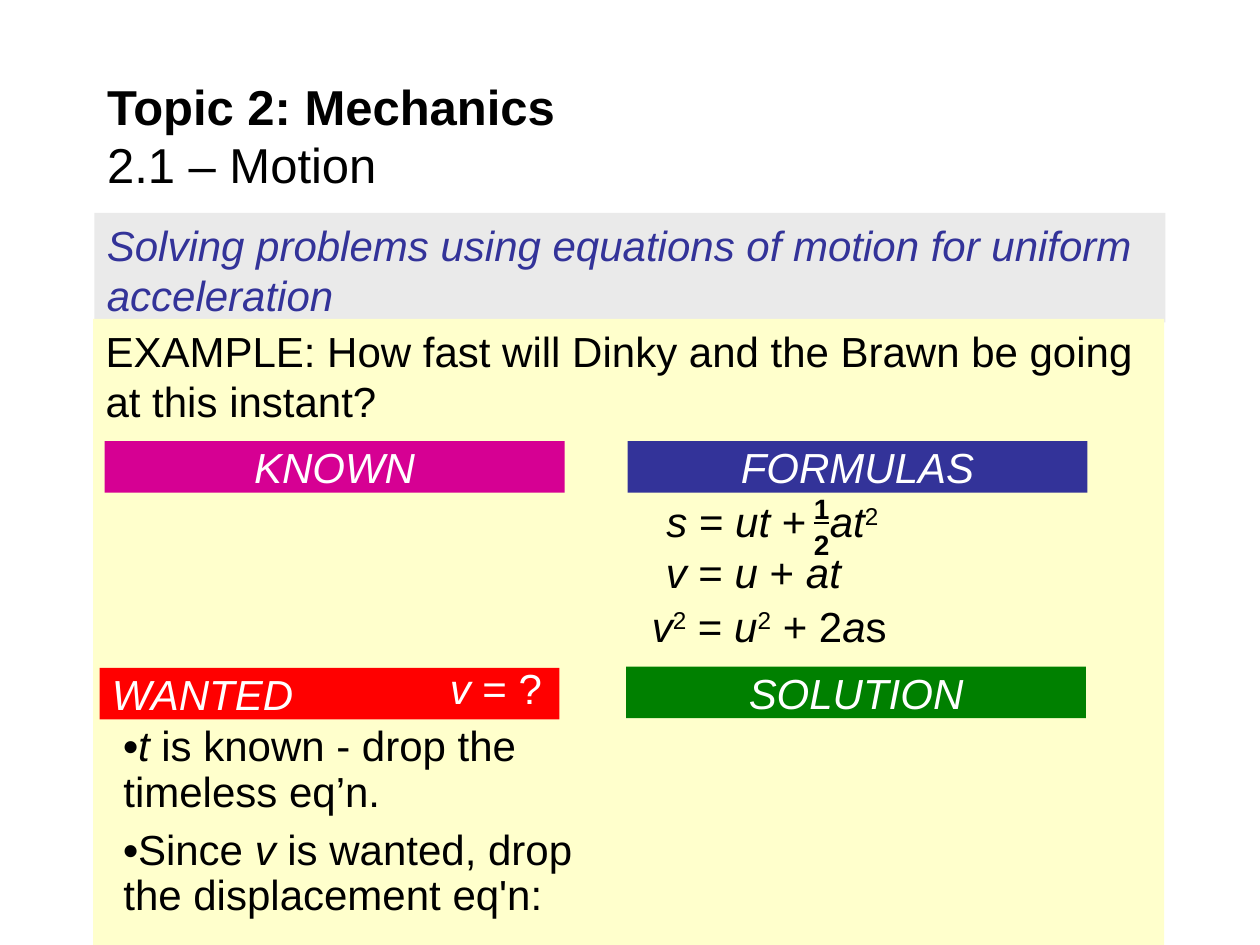
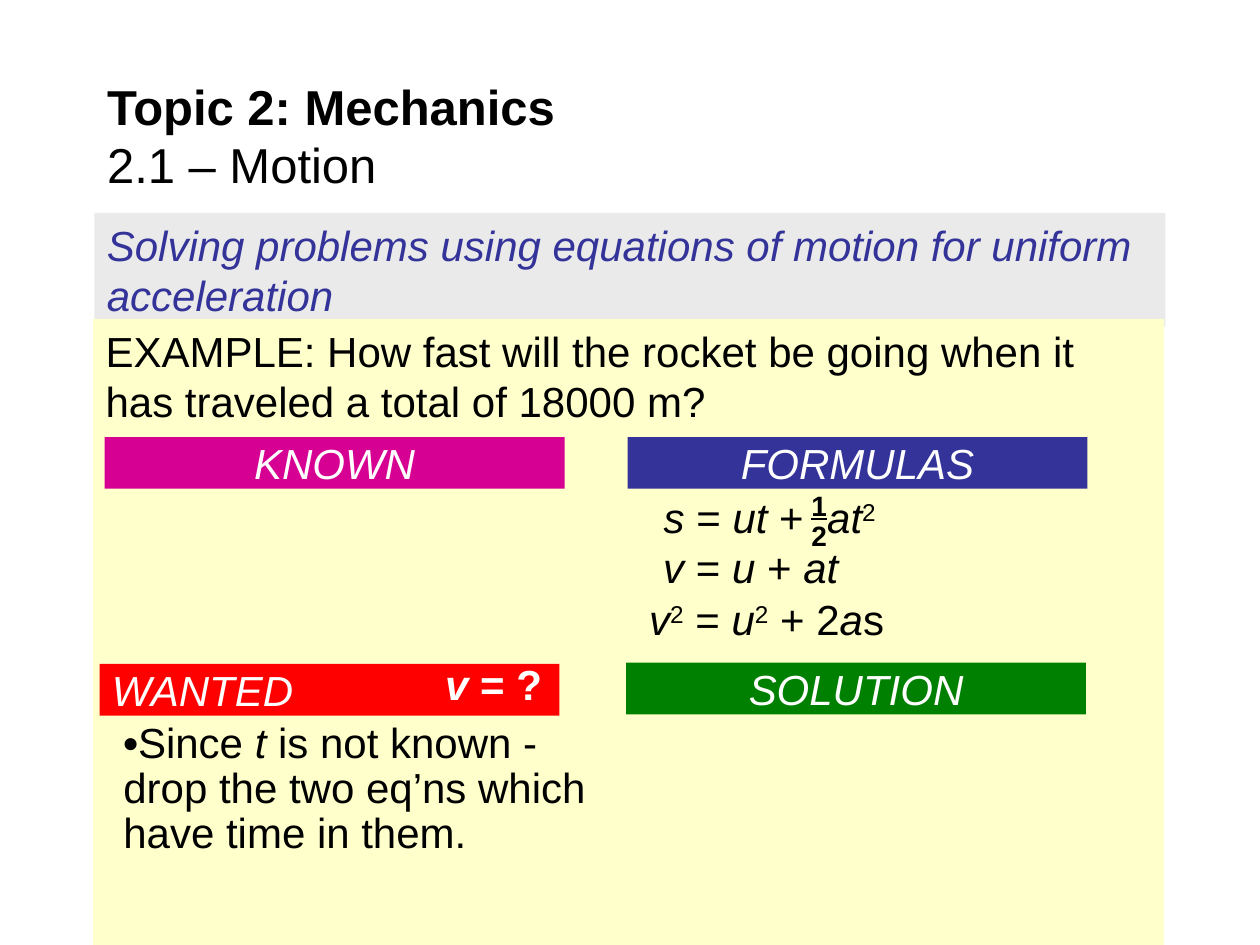
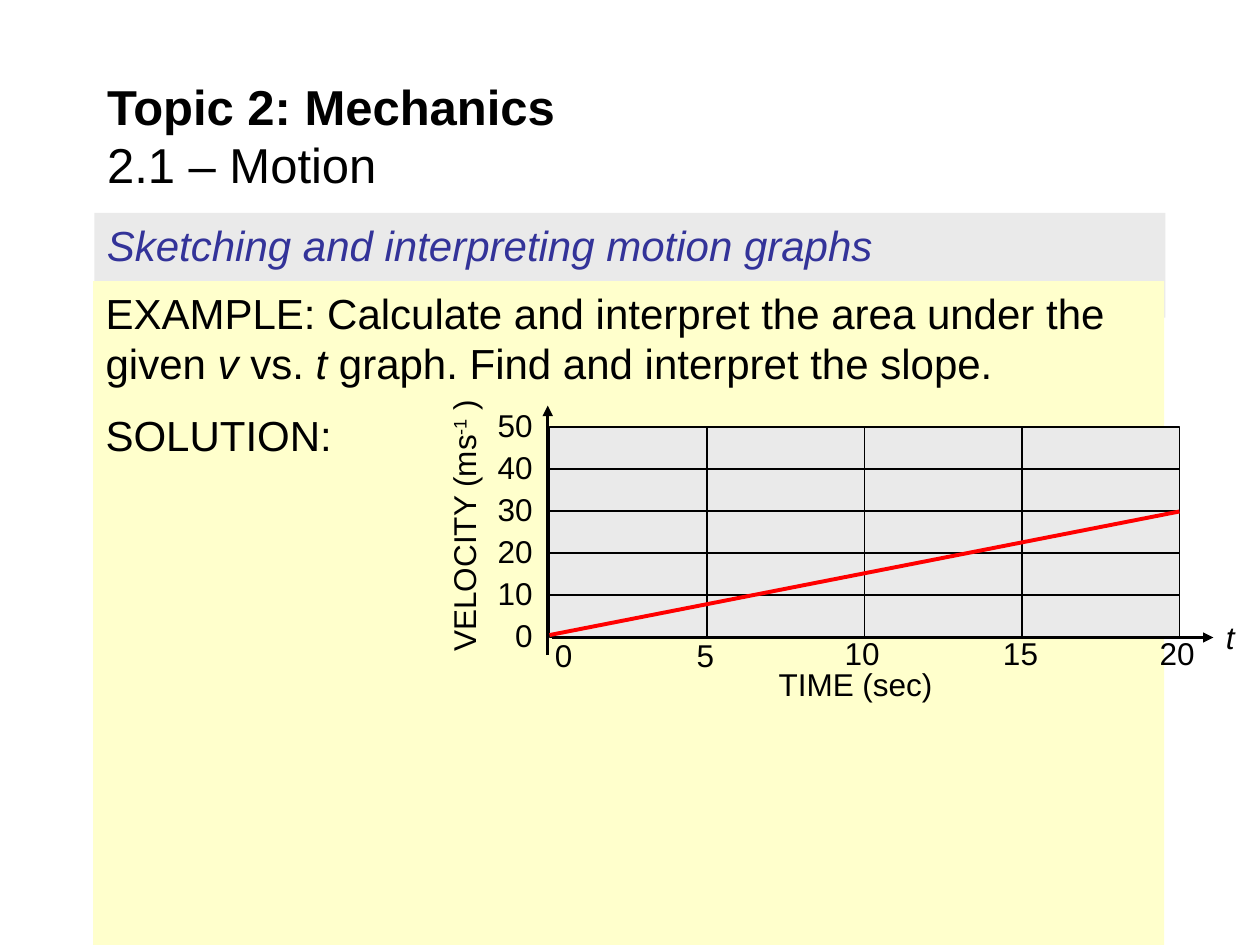
"""Build three physics slides on uniform acceleration and motion graphs."""
from lxml import etree
from pptx import Presentation
from pptx.dml.color import RGBColor
from pptx.enum.shapes import MSO_CONNECTOR, MSO_SHAPE
from pptx.enum.text import MSO_ANCHOR, MSO_AUTO_SIZE, PP_ALIGN
from pptx.oxml.ns import qn
from pptx.util import Pt

LEFT, CENTER, RIGHT = PP_ALIGN.LEFT, PP_ALIGN.CENTER, PP_ALIGN.RIGHT
RECTANGLE, STRAIGHT = MSO_SHAPE.RECTANGLE, MSO_CONNECTOR.STRAIGHT
TOP, MIDDLE = MSO_ANCHOR.TOP, MSO_ANCHOR.MIDDLE
NO_FIT = MSO_AUTO_SIZE.NONE

FONT = "Arial"
BLACK, WHITE, RED = "000000", "FFFFFF", "FF0000"
GRAY, CREAM, NAVY = "EAEAEA", "FFFFCC", "333399"
MAGENTA, GREEN = "D60093", "008000"


def write(paragraph, spans, size=24, color=BLACK, align=LEFT, spacing=1.0, before=4.8):
    """Fill a paragraph with (text, style) spans; styles are b, i, u, ^ and w (wide)."""
    paragraph.alignment = align
    paragraph.line_spacing = spacing
    paragraph.space_before = Pt(before)
    paragraph.font.name = FONT
    paragraph.font.size = Pt(size)
    paragraph.font.color.rgb = RGBColor.from_string(color)
    for text, style in spans:
        if text == "\n":
            paragraph.add_line_break()
            continue
        span = paragraph.add_run()
        span.text = text
        span.font.bold = "b" in style
        span.font.italic = "i" in style
        if "u" in style:
            span.font.underline = True
        if "^" in style:
            span._r.get_or_add_rPr().set("baseline", "30000")
        if "w" in style:
            span._r.get_or_add_rPr().set("spc", "670")


def add_box(page, left, top, width, height, fill=None, wrap=True):
    """Add a filled rectangle, or a text box when there is no fill."""
    area = Pt(left), Pt(top), Pt(width), Pt(height)
    if fill:
        box = page.shapes.add_shape(RECTANGLE, *area)
        box.shadow.inherit = False
        box.fill.solid()
        box.fill.fore_color.rgb = RGBColor.from_string(fill)
        box.line.fill.background()
    else:
        box = page.shapes.add_textbox(*area)
    box.text_frame.word_wrap = wrap
    box.text_frame.vertical_anchor = TOP
    return box


SOLVING = "Solving problems using equations of motion for uniform acceleration"
SKETCHING = "Sketching and interpreting motion graphs"
HEADINGS = [
    (SOLVING, 62.6, 182.2, [("EXAMPLE: How fast will Dinky and the Brawn be going at this instant?", "")]),
    (SOLVING, 64.8, 182.2, [("EXAMPLE: How fast will the rocket be going when it has traveled a total of 18000 m?", "")]),
    (SKETCHING, 59.8, 160.6, [
        ("EXAMPLE: Calculate and interpret the area under the given ", ""), ("v", "i"),
        (" vs. ", ""), ("t", "i"), (" graph. Find and interpret the slope.", "")]),
]

deck = Presentation()
deck.slide_width, deck.slide_height = Pt(720), Pt(540)

pages, examples = [], []
for topic, topic_height, example_top, question in HEADINGS:
    page = deck.slides.add_slide(deck.slide_layouts[5])
    topic_band = add_box(page, 54, 121.7, 612, topic_height, GRAY)
    write(topic_band.text_frame.paragraphs[0], [(topic, "i")], color=NAVY)

    title = page.shapes.title
    title.left, title.top, title.width, title.height = Pt(54), Pt(41.8), Pt(612), Pt(70.6)
    title.text_frame.vertical_anchor = MIDDLE
    title.text_frame.auto_size = NO_FIT
    write(title.text_frame.paragraphs[0],
          [("Topic 2: Mechanics", "b"), ("\n", ""), ("2.1 – Motion", "")], size=28, before=0)

    example = add_box(page, 53.3, example_top, 612, 540 - example_top, CREAM)
    write(example.text_frame.paragraphs[0], question)
    pages.append(page)
    examples.append(example)

DISTANCE = [("s ", "i"), ("= ", ""), ("ut", "i"), (" +", ""), (" ", "w"), ("at", "i"), ("2", "^")]
SPEED = [("v", "i"), (" = ", ""), ("u ", "i"), ("+ ", ""), ("at", "i")]
TIMELESS = [("v", "i"), ("2", "^"), (" = ", ""), ("u", "i"), ("2", "^"), (" + 2", ""), ("a", "i"), ("s", "")]
PROBLEMS = [
    (252, 373.4, (283, 311.8, 342.7), 3.2, [("v", "i"), (" = ?", "")], [
        (411.1, 58.3, [("•", "b"), ("t", "i"), (" is known - drop the timeless eq’n.", "")]),
        (470.2, 65.5, [("•", "b"), ("Since ", ""), ("v", "i"),
                       (" is wanted, drop the displacement eq'n:", "")])]),
    (249.8, 371.9, (280.8, 308.9, 339.1), 0, [("v", "bi"), (" = ?", "b")], [
        (409, 58.3, [("•", "b"), ("Since ", ""), ("t", "i"),
                     (" is not known - drop the two eq’ns which have time in them.", "")])]),
]

for page, (band_top, shift_left, formula_tops, fraction_gap, wanted, hints) in zip(pages, PROBLEMS):
    for label, left, drop, fill, align in [
            ("KNOWN", 59.8, 0, MAGENTA, CENTER), ("WANTED", 56.9, 129.6, RED, LEFT),
            ("FORMULAS", 358.6, 0, NAVY, CENTER), ("SOLUTION", 357.8, 128.9, GREEN, CENTER)]:
        band = add_box(page, left, band_top + drop, 262.8, 29.5, fill)
        write(band.text_frame.paragraphs[0], [(label, "i")], color=WHITE, align=align, spacing=0.9)

    wanted_box = add_box(page, 231.1, band_top + 126, 85.7, 29.5)
    write(wanted_box.text_frame.paragraphs[0], wanted, color=WHITE, align=RIGHT, spacing=0.9)

    for formula, offset, top, width, height in zip(
            (DISTANCE, SPEED, TIMELESS), (0.3, 0, -8), formula_tops,
            (247.7, 152.6, 233.3), (25.2, 28.1, 31)):
        formula_box = add_box(page, shift_left + offset, top, width, height)
        write(formula_box.text_frame.paragraphs[0], formula, spacing=0.9)

    fraction = add_box(page, shift_left + 83.5, formula_tops[0] - 3.2, 25.2, 33.1).text_frame
    for paragraph, digit, style in [
            (fraction.paragraphs[0], "1", "bu"), (fraction.add_paragraph(), "2", "b")]:
        write(paragraph, [(digit, style)], size=16, align=CENTER, spacing=0.9, before=fraction_gap)

    for top, height, hint in hints:
        hint_box = add_box(page, 63.4, top, 286.6, height)
        write(hint_box.text_frame.paragraphs[0], hint, spacing=0.9)

graph_page = pages[2]
write(examples[2].text_frame.add_paragraph(), [("SOLUTION:", "")], before=12)

GRID_LEFT, GRID_TOP, CELL_WIDTH, CELL_HEIGHT = 314, 244, 90, 24
for row in range(5):
    for column in range(4):
        cell = add_box(graph_page, GRID_LEFT + column * CELL_WIDTH, GRID_TOP + row * CELL_HEIGHT,
                       CELL_WIDTH, CELL_HEIGHT, GRAY)
        cell.line.color.rgb = RGBColor.from_string(BLACK)
        cell.line.width = Pt(0.75)

labels = [
    ([("VELOCITY (ms", ""), ("-1", "^"), (" )", "")], 185, 285.1, 159.8, LEFT, 270),
    ([("t", "i")], 693.4, 349.9, 19.4, LEFT, 0),
    ([("TIME (sec)", "")], 437.8, 376.6, 102.2, LEFT, 0),
]
for step in range(6):
    text = str(step * 10)
    width = 14.5 + 10 * len(text)
    labels.append(([(text, "")], 311.5 - width, 348.5 - step * CELL_HEIGHT, width, RIGHT, 0))
for step, (middle, top) in enumerate([(322, 360), (403, 360), (492.5, 359), (583, 359), (672.5, 359)]):
    text = str(step * 5)
    width = 14.5 + 10 * len(text)
    labels.append(([(text, "")], middle - width / 2, top, width, RIGHT, 0))
for spans, left, top, width, align, rotation in labels:
    label_box = add_box(graph_page, left, top, width, 28.8, wrap=False)
    label_box.rotation = rotation
    write(label_box.text_frame.paragraphs[0], spans, size=18, align=align, before=0)

for start_x, start_y, end_x, end_y, color, weight, arrow in [
        (313, 374.4, 313, 231.8, BLACK, 1.5, True),
        (315.4, 364.3, 693.4, 364.3, BLACK, 1.5, True),
        (674, 292.3, 314, 362.9, RED, 2.25, False)]:
    line = graph_page.shapes.add_connector(STRAIGHT, Pt(start_x), Pt(start_y), Pt(end_x), Pt(end_y))
    line.line.color.rgb = RGBColor.from_string(color)
    line.line.width = Pt(weight)
    if arrow:
        etree.SubElement(line.line._get_or_add_ln(), qn("a:tailEnd"), type="triangle")
    etree.SubElement(line._element.spPr, qn("a:effectLst"))

deck.save("out.pptx")
